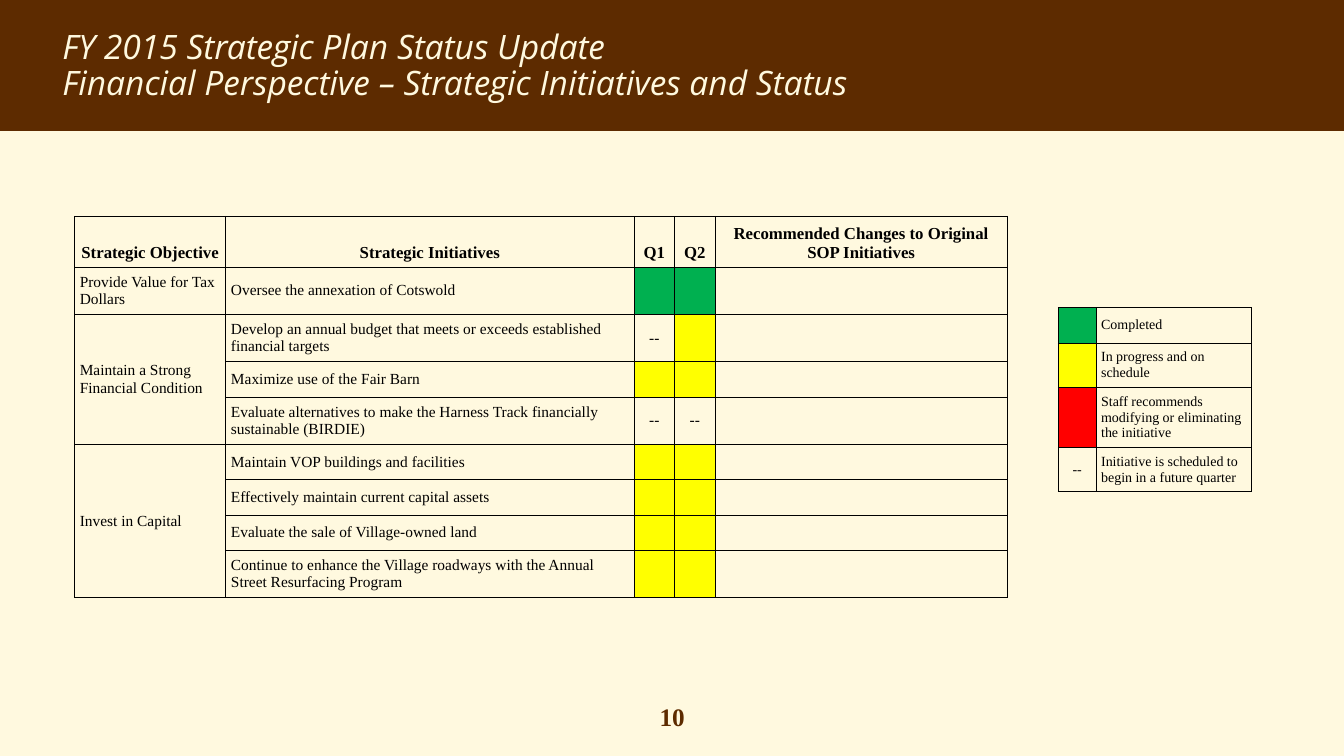
from lxml import etree
from pptx import Presentation
from pptx import util as u
from pptx.dml.color import RGBColor
from pptx.enum import shapes, text
from pptx.oxml.ns import qn

COLOURS = {"brown": "5D2B00", "cream": "FFF9DF", "black": "000000",
           "green": "00B050", "yellow": "FFFF00", "red": "FF0000"}
SERIF = "Times New Roman"
TITLE = ["FY 2015 Strategic Plan Status Update",
         "Financial Perspective – Strategic Initiatives and Status"]
HEADINGS = ["Strategic Objective", "Strategic Initiatives", "Q1", "Q2",
            "Recommended Changes to Original SOP Initiatives"]
OBJECTIVES = {
    "Provide Value for Tax Dollars": [
        ("Oversee the annexation of Cotswold", "green", "green")],
    "Maintain a Strong Financial Condition": [
        ("Develop an annual budget that meets or exceeds established financial targets", "--", "yellow"),
        ("Maximize use of the Fair Barn", "yellow", "yellow"),
        ("Evaluate alternatives to make the Harness Track financially sustainable (BIRDIE)", "--", "--")],
    "Invest in Capital": [
        ("Maintain VOP buildings and facilities", "yellow", "yellow"),
        ("Effectively maintain current capital assets", "yellow", "yellow"),
        ("Evaluate the sale of Village-owned land", "yellow", "yellow"),
        ("Continue to enhance the Village roadways with the Annual Street Resurfacing Program",
         "yellow", "yellow")],
}
LEGEND = [("green", "Completed"),
          ("yellow", "In progress and on schedule"),
          ("red", "Staff recommends modifying or eliminating the initiative"),
          ("--", "Initiative is scheduled to begin in a future quarter")]


class StatusSlide:
    """Draws the parts of a status slide in one shared style."""

    def __init__(self, deck):
        self.slide = deck.slides.add_slide(deck.slide_layouts[5])
        self.paint(self.slide.background.fill, "cream")

    def paint(self, fill, colour):
        fill.solid()
        fill.fore_color.rgb = RGBColor.from_string(COLOURS[colour])

    def add_words(self, paragraph, words, colour="black", align=text.PP_ALIGN.LEFT, **font):
        paragraph.alignment = align
        run = paragraph.add_run()
        run.text = words
        run.font.color.rgb = RGBColor.from_string(COLOURS[colour])
        for name, value in font.items():
            setattr(run.font, name, value)

    def band(self, width, height):
        band = self.slide.shapes.add_shape(shapes.MSO_SHAPE.RECTANGLE, 0, 0, width, height)
        band.shadow.inherit = False
        self.paint(band.fill, "brown")
        band.line.fill.background()
        self.slide.shapes._spTree.insert(2, band._element)

    def title(self, lines, left, top, width, height):
        heading = self.slide.shapes.title
        place = {"left": left, "top": top, "width": width, "height": height}
        for name, value in place.items():
            setattr(heading, name, u.Cm(value))
        frame = heading.text_frame
        settings = {"word_wrap": True, "vertical_anchor": text.MSO_ANCHOR.TOP,
                    "auto_size": text.MSO_AUTO_SIZE.NONE}
        for name, value in settings.items():
            setattr(frame, name, value)
        for number, line in enumerate(lines):
            paragraph = frame.add_paragraph() if number else frame.paragraphs[0]
            paragraph.line_spacing = 0.9
            self.add_words(paragraph, line, "cream", name="Open Sans", size=u.Pt(24), italic=True)

    def page_number(self, number, left, top, width, height):
        box = self.slide.shapes.add_textbox(*map(u.Cm, (left, top, width, height)))
        box.text_frame.word_wrap = True
        self.add_words(box.text_frame.paragraphs[0], number, "brown", text.PP_ALIGN.CENTER,
                       name=SERIF, size=u.Pt(18), bold=True)

    def border(self, cell):
        properties = cell._tc.get_or_add_tcPr()
        for side in ("a:lnL", "a:lnR", "a:lnT", "a:lnB"):
            line = etree.SubElement(properties, qn(side), w=str(u.Pt(0.5)))
            fill = etree.SubElement(line, qn("a:solidFill"))
            etree.SubElement(fill, qn("a:srgbClr"), val=COLOURS["black"])

    def cell(self, cell, words, size, header=False):
        margins = {f"margin_{side}": u.Cm(0.13) for side in ("left", "right", "top", "bottom")}
        anchor = text.MSO_ANCHOR.BOTTOM if header else text.MSO_ANCHOR.MIDDLE
        for name, value in {**margins, "vertical_anchor": anchor}.items():
            setattr(cell, name, value)
        self.border(cell)
        paragraph = cell.text_frame.paragraphs[0]
        if words in COLOURS:
            self.paint(cell.fill, words)
        else:
            cell.fill.background()
            if words:
                centred = header or words == "--"
                align = text.PP_ALIGN.CENTER if centred else text.PP_ALIGN.LEFT
                self.add_words(paragraph, words, align=align, name=SERIF, size=u.Pt(size), bold=header)
        etree.SubElement(paragraph._p, qn("a:endParaRPr"), sz=str(size * 100))

    def table(self, rows, left, top, widths, size, header=False):
        row_height = 0.89
        frame = self.slide.shapes.add_table(
            len(rows), len(widths), u.Cm(left), u.Cm(top),
            u.Cm(sum(widths)), u.Cm(row_height * len(rows)))
        table = frame.table
        table.first_row = table.horz_banding = False
        for column, width in zip(table.columns, widths):
            column.width = u.Cm(width)
        for r, row in enumerate(rows):
            table.rows[r].height = u.Cm(row_height)
            is_header = header and r == 0
            for c, words in enumerate(row):
                self.cell(table.cell(r, c), words, 12 if is_header else size, is_header)
        return table


def main():
    deck = Presentation()
    deck.slide_width, deck.slide_height = u.Cm(33.87), u.Cm(19.05)
    status = StatusSlide(deck)
    status.band(deck.slide_width, u.Cm(3.3))
    status.page_number("10", 15.67, 17.55, 2.54, 1.02)
    status.title(TITLE, 1.32, 0.64, 31.22, 2.31)

    rows = [HEADINGS]
    spans = []
    for objective, initiatives in OBJECTIVES.items():
        spans.append((len(rows), len(rows) + len(initiatives) - 1))
        for number, initiative in enumerate(initiatives):
            rows.append(["" if number else objective, *initiative, ""])
    plan = status.table(rows, 1.88, 5.45, [3.81, 10.29, 1.02, 1.02, 7.37], 11, header=True)
    for first, last in spans:
        if last > first:
            plan.cell(first, 0).merge(plan.cell(last, 0))

    status.table(LEGEND, 26.67, 7.75, [0.95, 3.91], 10)
    deck.save("out.pptx")


if __name__ == "__main__":
    main()
